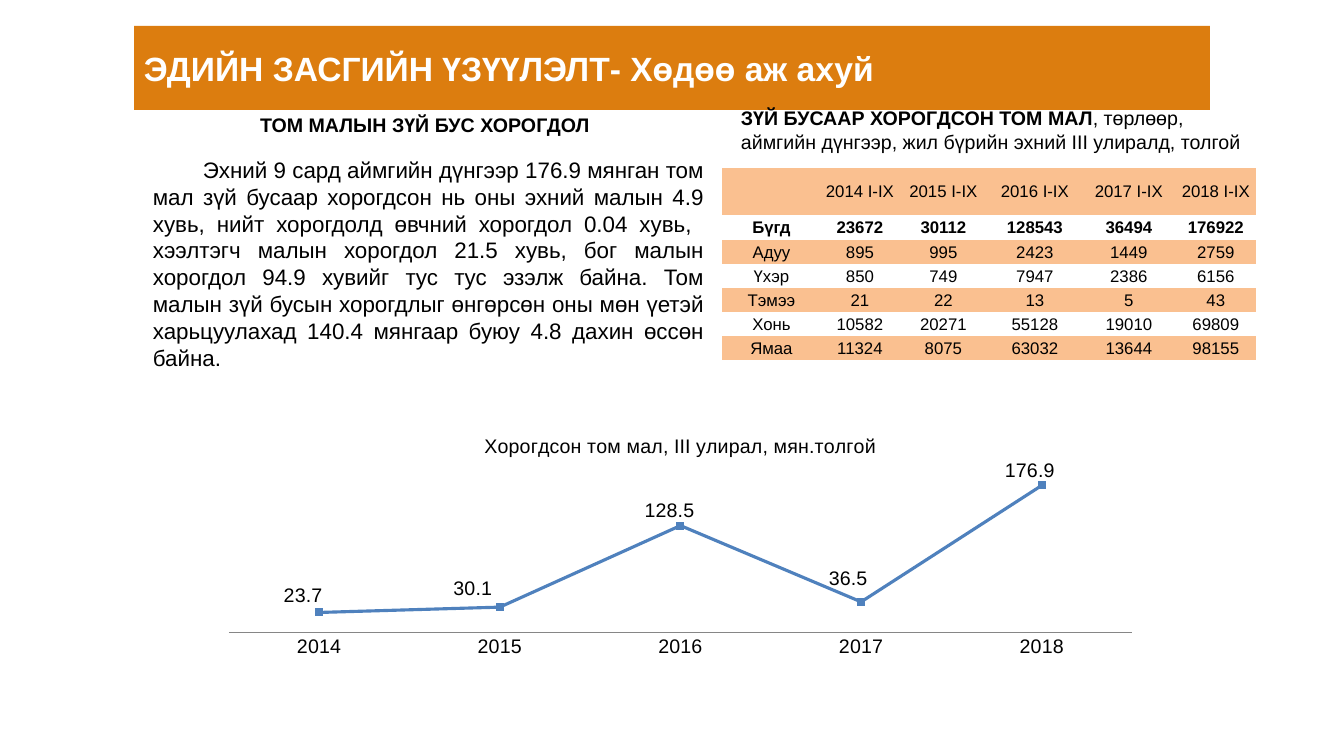
from lxml import etree
from pptx import Presentation
from pptx import util as u
from pptx.chart import data as chart_data
from pptx.dml.color import RGBColor
from pptx.enum import chart as chart_enum, shapes, text
from pptx.oxml import ns

PX = 914400 / 100.8  # EMU per px
ORANGE = RGBColor(0xDC, 0x7D, 0x0F)
PEACH = RGBColor(0xFA, 0xC0, 0x90)
BLUE = RGBColor(0x4F, 0x81, 0xBD)
GRAY = RGBColor(0x86, 0x86, 0x86)
BLACK = RGBColor(0, 0, 0)
WHITE = RGBColor(255, 255, 255)
NO_STYLE = "{2D5ABB26-0587-4C30-8999-92F81FD0307C}"


def px(*lengths):
    return [u.Emu(round(length * PX)) for length in lengths]


def format_font(font, size, color=BLACK, bold=False):
    values = {"name": "Arial", "size": u.Pt(size), "bold": bold}
    for name, value in values.items():
        setattr(font, name, value)
    font.color.rgb = color


presentation = Presentation()
presentation.slide_width, presentation.slide_height = px(1344, 756)
slide = presentation.slides.add_slide(presentation.slide_layouts[6])

# Title bar
bar = slide.shapes.add_shape(shapes.MSO_SHAPE.RECTANGLE, *px(134, 26, 1076, 84))
bar.shadow.inherit = False
bar.fill.solid()
bar.fill.fore_color.rgb = ORANGE
bar.line.fill.background()
bar.text_frame.vertical_anchor = text.MSO_ANCHOR.MIDDLE
paragraph = bar.text_frame.paragraphs[0]
paragraph.text = "ЭДИЙН ЗАСГИЙН ҮЗҮҮЛЭЛТ- Хөдөө аж ахуй"
paragraph.alignment = text.PP_ALIGN.LEFT
format_font(paragraph.font, 24, WHITE, True)

# Table caption and body text
caption_runs = [
    ("ЗҮЙ БУСААР ХОРОГДСОН ТОМ МАЛ", True),
    (", төрлөөр, аймгийн дүнгээр, жил бүрийн эхний III улиралд, толгой", False),
]
body_runs = [(
    "Эхний 9 сард аймгийн дүнгээр 176.9 мянган том мал зүй бусаар хорогдсон нь "
    "оны эхний малын 4.9 хувь, нийт хорогдолд өвчний хорогдол 0.04 хувь,  "
    "хээлтэгч малын хорогдол 21.5 хувь, бог малын хорогдол 94.9 хувийг тус тус "
    "эзэлж байна. Том малын зүй бусын хорогдлыг өнгөрсөн оны мөн үетэй "
    "харьцуулахад 140.4 мянгаар буюу 4.8 дахин өссөн байна.", False)]
text_boxes = [
    ((731, 101, 529, 57), caption_runs, 14, text.PP_ALIGN.LEFT, 0),
    ((143, 151, 571, 228), body_runs, 16, text.PP_ALIGN.JUSTIFY, 50),
]
for bounds, runs, size, alignment, indent in text_boxes:
    frame = slide.shapes.add_textbox(*px(*bounds)).text_frame
    frame.word_wrap = True
    paragraph = frame.paragraphs[0]
    paragraph.alignment = alignment
    if indent:
        paragraph._p.get_or_add_pPr().set("indent", str(px(indent)[0]))
    for words, bold in runs:
        run = paragraph.add_run()
        run.text = words
        format_font(run.font, size, bold=bold)

# Tables: heading strip and livestock losses
losses = [
    ["", "2014 I-IX", "2015 I-IX", "2016 I-IX", "2017 I-IX", "2018 I-IX"],
    ["Бүгд", "23672", "30112", "128543", "36494", "176922"],
    ["Адуу", "895", "995", "2423", "1449", "2759"],
    ["Үхэр", "850", "749", "7947", "2386", "6156"],
    ["Тэмээ", "21", "22", "13", "5", "43"],
    ["Хонь", "10582", "20271", "55128", "19010", "69809"],
    ["Ямаа", "11324", "8075", "63032", "13644", "98155"],
]
tables = [
    # left, top, rows, widths, heights, size, alignment, margin, bold row, banded
    (260, 109, [["ТОМ МАЛЫН ЗҮЙ БУС ХОРОГДОЛ"]], [345], [33],
     14, text.PP_ALIGN.LEFT, 0, 0, False),
    (722, 168, losses, [99, 78, 89, 94, 94, 80], [47, 25] + [24] * 5,
     12, text.PP_ALIGN.CENTER, 1, 1, True),
]
for left, top, rows, widths, heights, size, alignment, margin, bold_row, banded in tables:
    frame = slide.shapes.add_table(
        len(rows), len(widths), *px(left, top, sum(widths), sum(heights)))
    table = frame.table
    table.first_row = table.horz_banding = False
    table._tbl.tblPr.find(ns.qn("a:tableStyleId")).text = NO_STYLE
    for column, width in zip(table.columns, px(*widths)):
        column.width = width
    for row, height in zip(table.rows, px(*heights)):
        row.height = height
    for r, row_values in enumerate(rows):
        for c, value in enumerate(row_values):
            cell = table.cell(r, c)
            cell.vertical_anchor = text.MSO_ANCHOR.MIDDLE
            for side in ("left", "top", "right"):
                setattr(cell, f"margin_{side}", px(margin)[0])
            cell.margin_bottom = 0
            if banded and r % 2 == 0:
                cell.fill.solid()
                cell.fill.fore_color.rgb = PEACH
            else:
                cell.fill.background()
            paragraph = cell.text_frame.paragraphs[0]
            paragraph.text = value
            paragraph.alignment = alignment
            format_font(paragraph.font, size, bold=r == bold_row)

# Line chart
chart_values = chart_data.CategoryChartData()
chart_values.categories = ["2014", "2015", "2016", "2017", "2018"]
chart_values.add_series("Series 1", [23.7, 30.1, 128.5, 36.5, 176.9])
chart = slide.shapes.add_chart(
    chart_enum.XL_CHART_TYPE.LINE_MARKERS, *px(210, 420, 941, 244), chart_values).chart
chart.has_legend = False
chart.font.name, chart.font.size = "Calibri", u.Pt(10)
chart.font.color.rgb = BLACK
chart.has_title = True
title = chart.chart_title.text_frame.paragraphs[0]
title_run = title.add_run()
title_run.text = "Хорогдсон том мал, III улирал, мян.толгой"
format_font(title_run.font, 14)

value_axis = chart.value_axis
value_axis.visible = False
value_axis.has_major_gridlines = False
value_axis.minimum_scale, value_axis.maximum_scale = 0, 200
category_axis = chart.category_axis
category_axis.major_tick_mark = chart_enum.XL_TICK_MARK.NONE
category_axis.format.line.color.rgb = GRAY
format_font(category_axis.tick_labels.font, 14)

# Plot area fixed inside the chart frame
plot_area = chart._chartSpace.chart.plotArea
for old_layout in plot_area.findall(ns.qn("c:layout")):
    plot_area.remove(old_layout)
layout = etree.Element(ns.qn("c:layout"))
manual = etree.SubElement(layout, ns.qn("c:manualLayout"))
for tag, value in [("layoutTarget", "inner"), ("xMode", "edge"), ("yMode", "edge"),
                   ("x", 0.02), ("y", 0.19), ("w", 0.96), ("h", 0.68)]:
    etree.SubElement(manual, ns.qn(f"c:{tag}")).set("val", str(value))
plot_area.insert(0, layout)

# Series line, markers and shifted value labels
plot = chart.plots[0]
plot.vary_by_categories = False
series = plot.series[0]
series.smooth = False
series.format.line.color.rgb = BLUE
series.format.line.width = u.Pt(2.25)
series.marker.style = chart_enum.XL_MARKER_STYLE.SQUARE
series.marker.size = 5
series.marker.format.fill.solid()
series.marker.format.fill.fore_color.rgb = BLUE
series.marker.format.line.color.rgb = BLUE
series.data_labels.show_value = True
format_font(series.data_labels.font, 14)
label_shifts = [(-16, 2), (-27, 0), (-11, 4), (-13, -5), (-12, 4)]
for i, (dx, dy) in enumerate(label_shifts):
    label = series.points[i].data_label
    format_font(label.font, 14)
    label.position = chart_enum.XL_LABEL_POSITION.ABOVE
    layout = etree.Element(ns.qn("c:layout"))
    manual = etree.SubElement(layout, ns.qn("c:manualLayout"))
    for tag, value in [("x", dx / 941), ("y", dy / 244)]:
        etree.SubElement(manual, ns.qn(f"c:{tag}")).set("val", f"{value:.4f}")
    label._dLbl.find(ns.qn("c:idx")).addnext(layout)

presentation.save("out.pptx")
